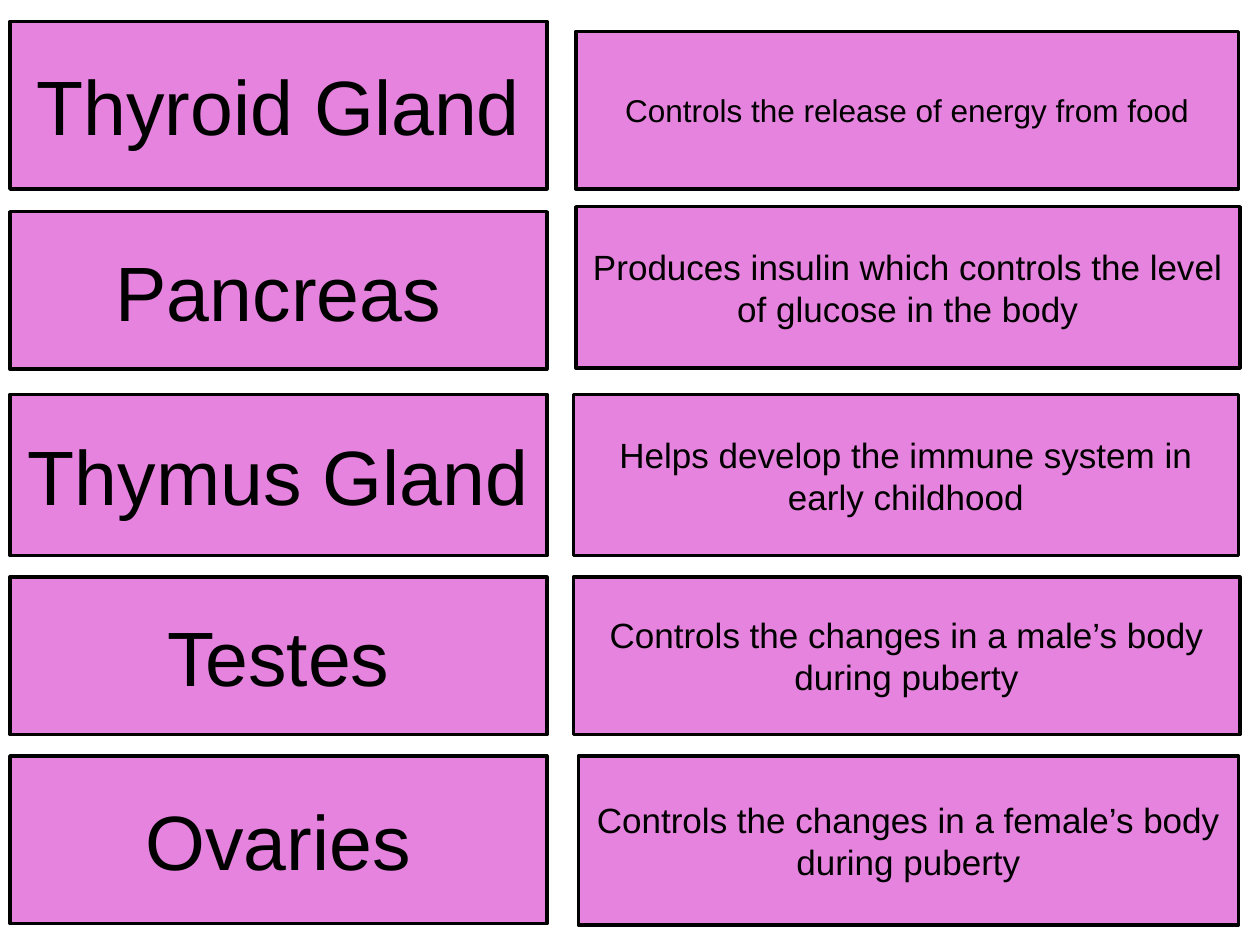
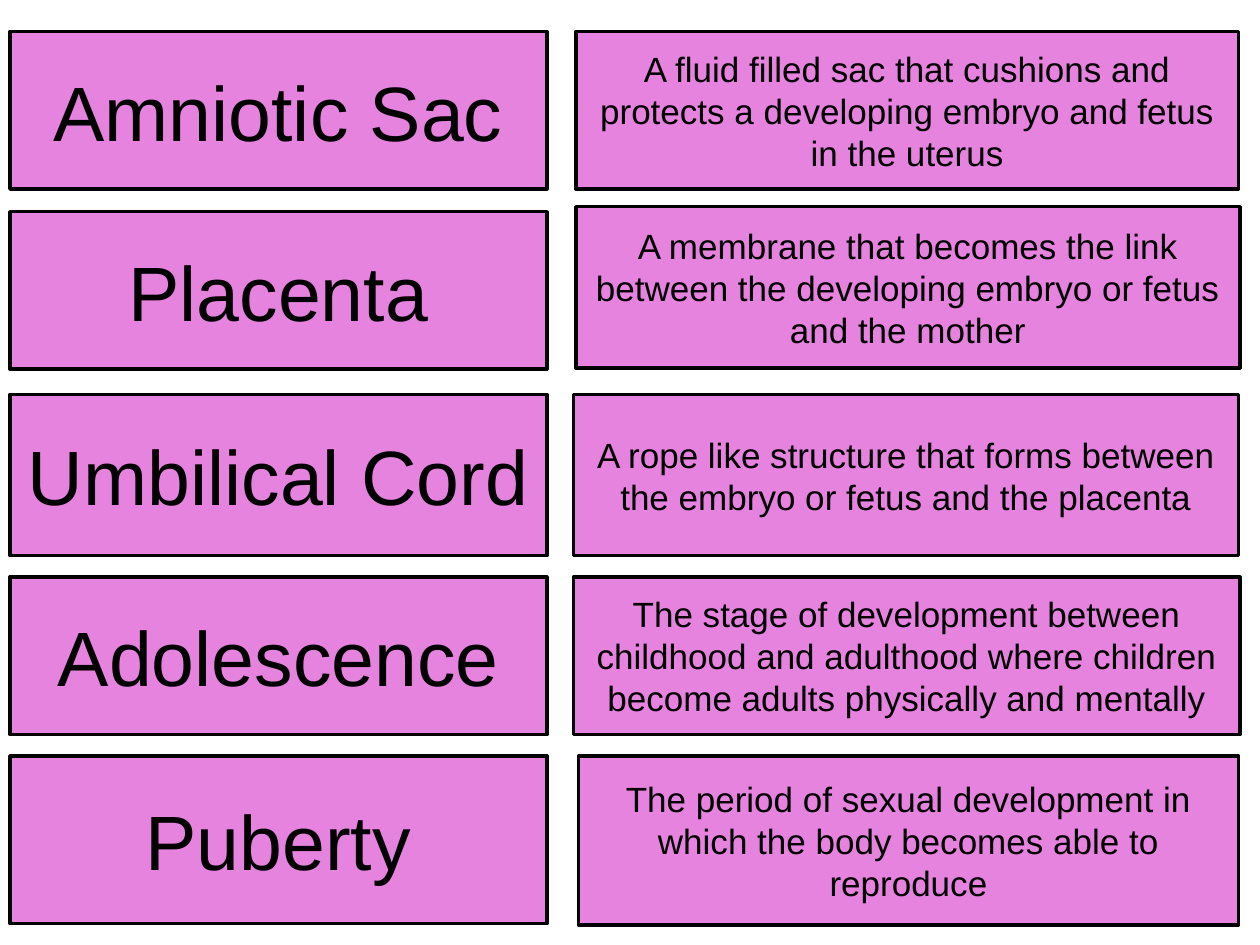
from pptx import Presentation
from pptx.dml.color import RGBColor
from pptx.enum.shapes import MSO_SHAPE
from pptx.enum.text import MSO_ANCHOR, PP_ALIGN
from pptx.util import Inches, Pt

PROCESS = MSO_SHAPE.FLOWCHART_PROCESS
MIDDLE = MSO_ANCHOR.MIDDLE
CENTER = PP_ALIGN.CENTER

PINK = RGBColor(0xE5, 0x83, 0xDE)
BLACK = RGBColor(0x00, 0x00, 0x00)
FONT = "Arial"
TERM_SIZE = 44
MEANING_SIZE = 20

# Boxes are (left, top, width, height) in inches, one per row.
TERM_LEFT, TERM_WIDTH = 0.08, 4.26
TERM_ROWS = [(0.25, 1.25), (1.68, 1.25), (3.13, 1.28), (4.58, 1.25), (6, 1.33)]
TERM_BOXES = [(TERM_LEFT, top, TERM_WIDTH, height) for top, height in TERM_ROWS]
TALL_FIRST_TERM = (TERM_LEFT, 0.17, TERM_WIDTH, 1.33)
MEANING_BOXES = [
    (4.57, 0.25, 5.26, 1.25),
    (4.57, 1.64, 5.27, 1.28),
    (4.55, 3.13, 5.28, 1.28),
    (4.55, 4.58, 5.29, 1.25),
    (4.59, 6, 5.24, 1.34),
]

GLANDS = [
    ("Thyroid Gland", "Controls the release of energy from food"),
    ("Pancreas", "Produces insulin which controls the level of glucose in the body"),
    ("Thymus Gland", "Helps develop the immune system in early childhood"),
    ("Testes", "Controls the changes in a male’s body during puberty"),
    ("Ovaries", "Controls the changes in a female’s body during puberty"),
]
DEVELOPMENT = [
    ("Amniotic Sac", "A fluid filled sac that cushions and protects a developing "
                     "embryo and fetus in the uterus"),
    ("Placenta", "A membrane that becomes the link between the developing embryo "
                 "or fetus and the mother"),
    ("Umbilical Cord", "A rope like structure that forms between the embryo or "
                       "fetus and the placenta"),
    ("Adolescence", "The stage of development between childhood and adulthood "
                    "where children become adults physically and mentally"),
    ("Puberty", "The period of sexual development in which the body becomes able "
                "to reproduce"),
]


def add_card(slide, box, wording, size):
    card = slide.shapes.add_shape(PROCESS, *map(Inches, box))
    card.shadow.inherit = False
    card.fill.solid()
    card.fill.fore_color.rgb = PINK
    card.line.color.rgb = BLACK
    card.line.width = Pt(2)

    frame = card.text_frame
    frame.word_wrap = True
    frame.vertical_anchor = MIDDLE
    frame.text = wording
    paragraph = frame.paragraphs[0]
    paragraph.alignment = CENTER
    font = paragraph.runs[0].font
    font.name = FONT
    font.size = Pt(size)
    font.color.rgb = BLACK


def add_matching_slide(deck, entries, first_term_box=TERM_BOXES[0],
                       first_meaning_size=MEANING_SIZE):
    """Add a slide of term cards, each beside the card with its meaning."""
    slide = deck.slides.add_slide(deck.slide_layouts[6])
    term_boxes = [first_term_box] + TERM_BOXES[1:]
    meaning_sizes = [first_meaning_size] + [MEANING_SIZE] * (len(entries) - 1)
    rows = zip(entries, term_boxes, MEANING_BOXES, meaning_sizes)
    for (term, meaning), term_box, meaning_box, meaning_size in rows:
        add_card(slide, term_box, term, TERM_SIZE)
        add_card(slide, meaning_box, meaning, meaning_size)


def main():
    deck = Presentation()
    deck.slide_width = Inches(10)
    deck.slide_height = Inches(7.5)
    add_matching_slide(deck, GLANDS, TALL_FIRST_TERM, first_meaning_size=18)
    add_matching_slide(deck, DEVELOPMENT)
    deck.save("out.pptx")


if __name__ == "__main__":
    main()
